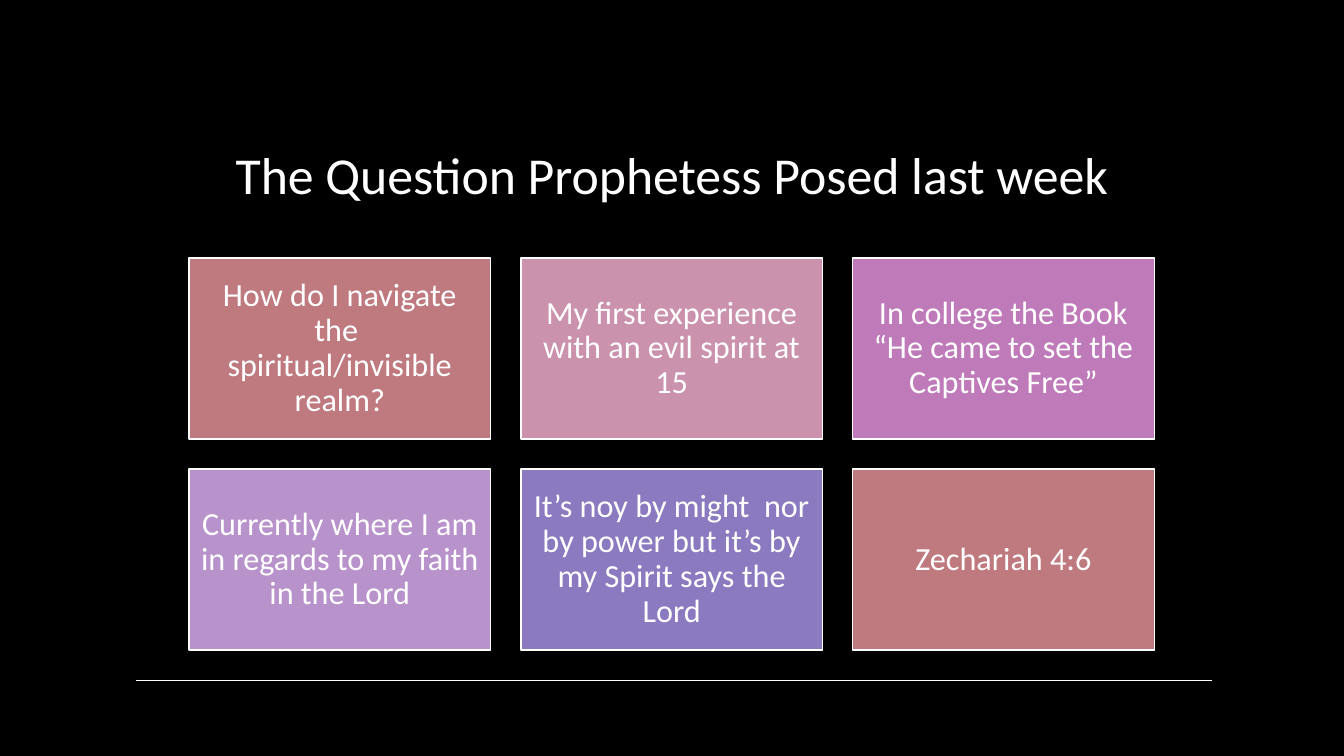
from dataclasses import dataclass

from lxml.etree import SubElement
from pptx import Presentation
from pptx.dml.color import RGBColor
from pptx.enum.shapes import MSO_CONNECTOR, MSO_SHAPE
from pptx.enum.text import MSO_ANCHOR, MSO_AUTO_SIZE, PP_ALIGN
from pptx.oxml.ns import qn
from pptx.slide import Slide
from pptx.text.text import TextFrame
from pptx.util import Pt

BLACK = RGBColor(0x00, 0x00, 0x00)
WHITE = RGBColor(0xFF, 0xFF, 0xFF)
ROSE = RGBColor(0xBF, 0x7A, 0x7F)
PINK = RGBColor(0xCB, 0x92, 0xAE)
ORCHID = RGBColor(0xBF, 0x7A, 0xB9)
LILAC = RGBColor(0xB8, 0x92, 0xCB)
VIOLET = RGBColor(0x8B, 0x7A, 0xBF)

FONT = "Calibri"
COLUMNS = 3
GRID_LEFT, GRID_TOP = 135.1, 184.3
CARD_WIDTH, CARD_HEIGHT = 215.5, 129.3
GAP = 21.5
CARD_INSET = Pt(7)


@dataclass(frozen=True)
class Card:
    text: str
    fill: RGBColor


CARDS = [
    Card("How do I navigate the  spiritual/invisible realm?", ROSE),
    Card("My first experience with an evil spirit at 15", PINK),
    Card("In college the Book “He came to set the Captives Free”", ORCHID),
    Card("Currently where I am in regards to my faith in the Lord", LILAC),
    Card("It’s noy by might  nor by power but it’s by my Spirit says the Lord", VIOLET),
    Card("Zechariah 4:6", ROSE),
]


def write_centred(frame: TextFrame, text: str, size: float, anchor: MSO_ANCHOR) -> None:
    frame.text = text
    frame.word_wrap = True
    frame.auto_size = MSO_AUTO_SIZE.NONE
    frame.vertical_anchor = anchor
    para = frame.paragraphs[0]
    para.alignment = PP_ALIGN.CENTER
    para.line_spacing = 0.9
    para.font.name = FONT
    para.font.size = Pt(size)
    para.font.color.rgb = WHITE


def add_title(page: Slide, text: str) -> None:
    title = page.shapes.title
    title.left, title.top = Pt(138), Pt(71.5)
    title.width, title.height = Pt(684), Pt(79)
    write_centred(title.text_frame, text, 37, MSO_ANCHOR.BOTTOM)


def add_rule(page: Slide) -> None:
    rule = page.shapes.add_connector(
        MSO_CONNECTOR.STRAIGHT, Pt(97), Pt(486), Pt(865.5), Pt(486)
    )
    rule.line.color.rgb = WHITE
    rule.line.width = Pt(1)
    SubElement(rule._element.spPr, qn("a:effectLst"))


def add_card(page: Slide, card: Card, index: int) -> None:
    row, column = divmod(index, COLUMNS)
    box = page.shapes.add_shape(
        MSO_SHAPE.RECTANGLE,
        Pt(GRID_LEFT + column * (CARD_WIDTH + GAP)),
        Pt(GRID_TOP + row * (CARD_HEIGHT + GAP)),
        Pt(CARD_WIDTH),
        Pt(CARD_HEIGHT),
    )
    box.shadow.inherit = False
    box.fill.solid()
    box.fill.fore_color.rgb = card.fill
    box.line.color.rgb = WHITE
    box.line.width = Pt(1)
    frame = box.text_frame
    frame.margin_left = frame.margin_right = CARD_INSET
    frame.margin_top = frame.margin_bottom = CARD_INSET
    write_centred(frame, card.text, 23, MSO_ANCHOR.MIDDLE)


def main() -> None:
    deck = Presentation()
    deck.slide_width, deck.slide_height = Pt(960), Pt(540)
    page = deck.slides.add_slide(deck.slide_layouts.get_by_name("Title Only"))
    page.background.fill.solid()
    page.background.fill.fore_color.rgb = BLACK
    add_title(page, "The Question Prophetess Posed last week")
    add_rule(page)
    for index, card in enumerate(CARDS):
        add_card(page, card, index)
    deck.save("out.pptx")


if __name__ == "__main__":
    main()
